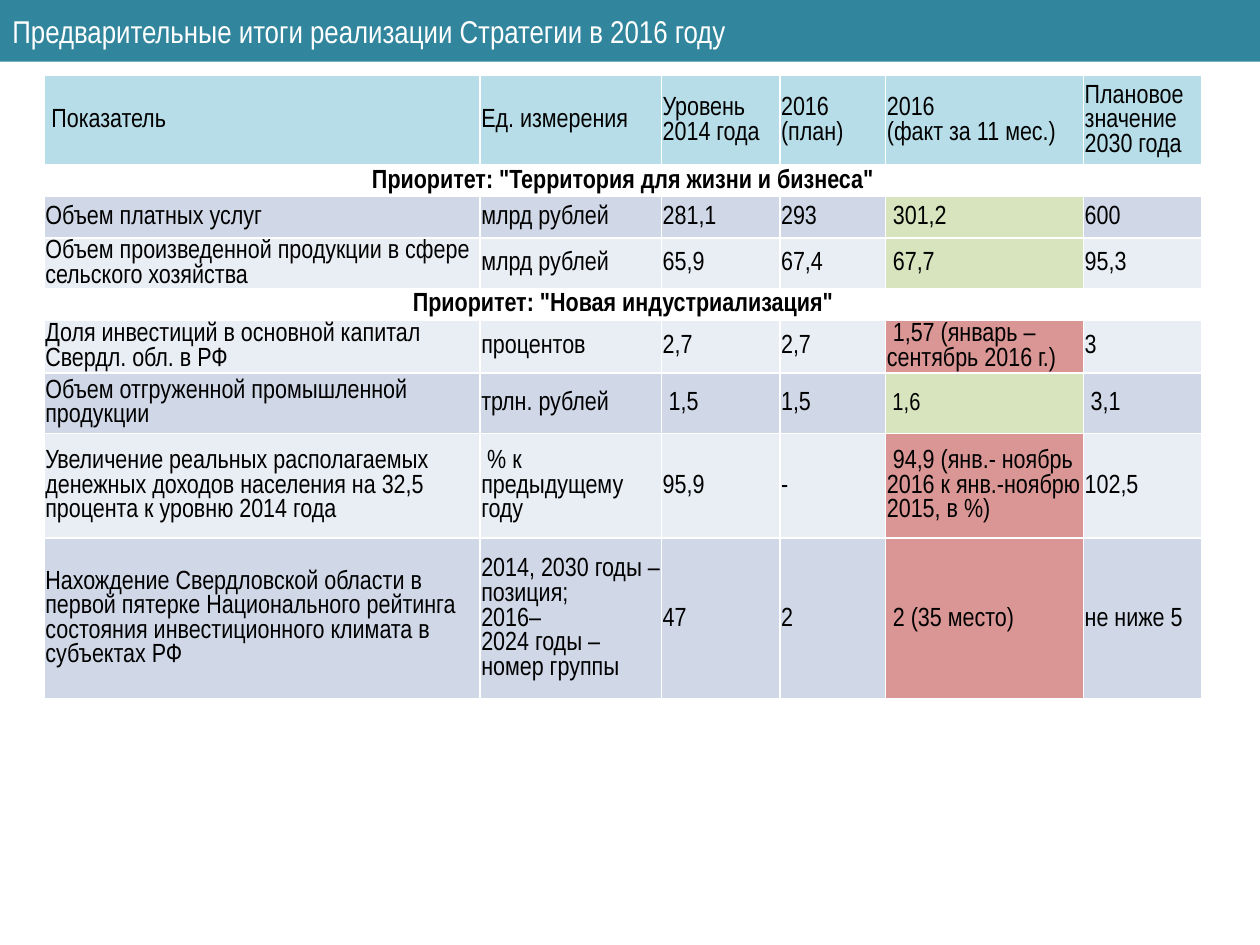
import copy
import pptx
import pptx.util
import pptx.dml.color
import pptx.enum.shapes
import pptx.enum.text
import pptx.oxml
import pptx.oxml.ns
import lxml.etree

Inches = pptx.util.Inches
Pt = pptx.util.Pt
RGBColor = pptx.dml.color.RGBColor
Align = pptx.enum.text.PP_ALIGN
Anchor = pptx.enum.text.MSO_ANCHOR
qn = pptx.oxml.ns.qn

FONT = "Arial Narrow"
WHITE = RGBColor(0xFF, 0xFF, 0xFF)
BLACK = RGBColor(0, 0, 0)
TEAL = RGBColor(0x31, 0x85, 0x9C)
HEAD = RGBColor(0xB7, 0xDE, 0xE8)
DARK = RGBColor(0xD0, 0xD8, 0xE8)
LIGHT = RGBColor(0xE9, 0xED, 0xF4)
GREEN = RGBColor(0xD7, 0xE4, 0xBD)
RED = RGBColor(0xD9, 0x96, 0x94)

TITLE = "Предварительные итоги реализации Стратегии в 2016 году"
COLS = [3.46, 1.44, 0.94, 0.84, 1.57, 0.94]
FACT = 4

# height, row fill, fact fill, texts
ROWS = [
    (0.71, HEAD, HEAD, [" Показатель", "Ед. измерения", "Уровень 2014 года",
                        "2016 (план)", "2016\n(факт за 11 мес.)",
                        "Плановое значение 2030 года"]),
    (0.25, None, None, ['Приоритет: "Территория для жизни и бизнеса"']),
    (0.33, DARK, GREEN, ["Объем платных услуг", "млрд рублей", "281,1",
                         "293", " 301,2", "600"]),
    (0.39, LIGHT, GREEN, ["Объем произведенной продукции в сфере сельского хозяйства",
                          "млрд рублей", "65,9", "67,4", " 67,7", "95,3"]),
    (0.25, None, None, ['Приоритет: "Новая индустриализация"']),
    (0.42, LIGHT, RED, ["Доля инвестиций в основной капитал Свердл. обл. в РФ",
                        "процентов", "2,7", "2,7",
                        " 1,57 (январь – сентябрь 2016 г.)", "3"]),
    (0.48, DARK, GREEN, ["Объем отгруженной промышленной продукции",
                         "трлн. рублей", " 1,5", "1,5", " 1,6", " 3,1"]),
    (0.83, LIGHT, RED, ["Увеличение реальных располагаемых денежных доходов "
                        "населения на 32,5 процента к уровню 2014 года",
                        " % к предыдущему году", "95,9", "-",
                        " 94,9 (янв.- ноябрь 2016 к янв.-ноябрю 2015, в %)",
                        "102,5"]),
    (1.28, DARK, RED, ["Нахождение Свердловской области в первой пятерке "
                       "Национального рейтинга состояния инвестиционного "
                       "климата в субъектах РФ",
                       "2014, 2030 годы – позиция;\v2016–\v2024 годы – номер группы",
                       "47", "2", " 2 (35 место)", "не ниже 5"]),
]


def write(frame, text, size=15, color=BLACK, bold=False, align=Align.LEFT):
    frame.text = text
    frame.word_wrap = True
    for par in frame.paragraphs:
        par.alignment = align
        for run in par.runs:
            font = run.font
            font.name, font.size, font.bold = FONT, Pt(size), bold
            font.color.rgb = color
        for gap in par._p.findall(qn("a:br")):
            gap.append(copy.deepcopy(par.runs[0]._r.rPr))


def edge(cell, top, base):
    props = cell._tc.get_or_add_tcPr()
    sides = [("lnL", 1), ("lnR", 1), ("lnT", top), ("lnB", base)]
    for spot, (tag, width) in enumerate(sides):
        line = lxml.etree.Element(qn("a:" + tag), w=str(Pt(width)))
        fill = lxml.etree.SubElement(line, qn("a:solidFill"))
        lxml.etree.SubElement(fill, qn("a:srgbClr"), val=str(WHITE))
        props.insert(spot, line)


def add_title(slide):
    bar = slide.shapes.add_shape(pptx.enum.shapes.MSO_SHAPE.RECTANGLE,
                                 0, 0, Inches(10), Inches(0.49))
    bar.shadow.inherit = False
    bar.fill.solid()
    bar.fill.fore_color.rgb = TEAL
    bar.line.fill.background()
    bar.text_frame.vertical_anchor = Anchor.MIDDLE
    write(bar.text_frame, TITLE, size=18, color=WHITE)


def add_grid(slide):
    high = sum(row[0] for row in ROWS)
    grid = slide.shapes.add_table(len(ROWS), len(COLS), Inches(0.35), Inches(0.6),
                                  Inches(sum(COLS)), Inches(high)).table
    grid.first_row = grid.horz_banding = False
    for col, width in zip(grid.columns, COLS):
        col.width = Inches(width)
    for r, (height, tint, mark, texts) in enumerate(ROWS):
        grid.rows[r].height = Inches(height)
        group = len(texts) == 1
        if group:
            grid.cell(r, 0).merge(grid.cell(r, len(COLS) - 1))
        for c in range(len(COLS)):
            cell = grid.cell(r, c)
            cell.margin_left = cell.margin_right = cell.margin_top = Inches(0.01)
            cell.margin_bottom = 0
            cell.vertical_anchor = Anchor.MIDDLE
            if group:
                cell.fill.background()
            else:
                cell.fill.solid()
                cell.fill.fore_color.rgb = mark if c == FACT else tint
            edge(cell, 1.5 if r == 1 else 1, 1.5 if r == 0 else 1)
            if c < len(texts):
                write(cell.text_frame, texts[c],
                      size=14 if texts[c] == " 1,6" else 15, bold=group,
                      align=Align.CENTER if group else Align.LEFT)


def main():
    deck = pptx.Presentation()
    deck.slide_width, deck.slide_height = Inches(10), Inches(7.5)
    slide = deck.slides.add_slide(deck.slide_layouts[6])
    add_title(slide)
    add_grid(slide)
    deck.save("out.pptx")


if __name__ == "__main__":
    main()
